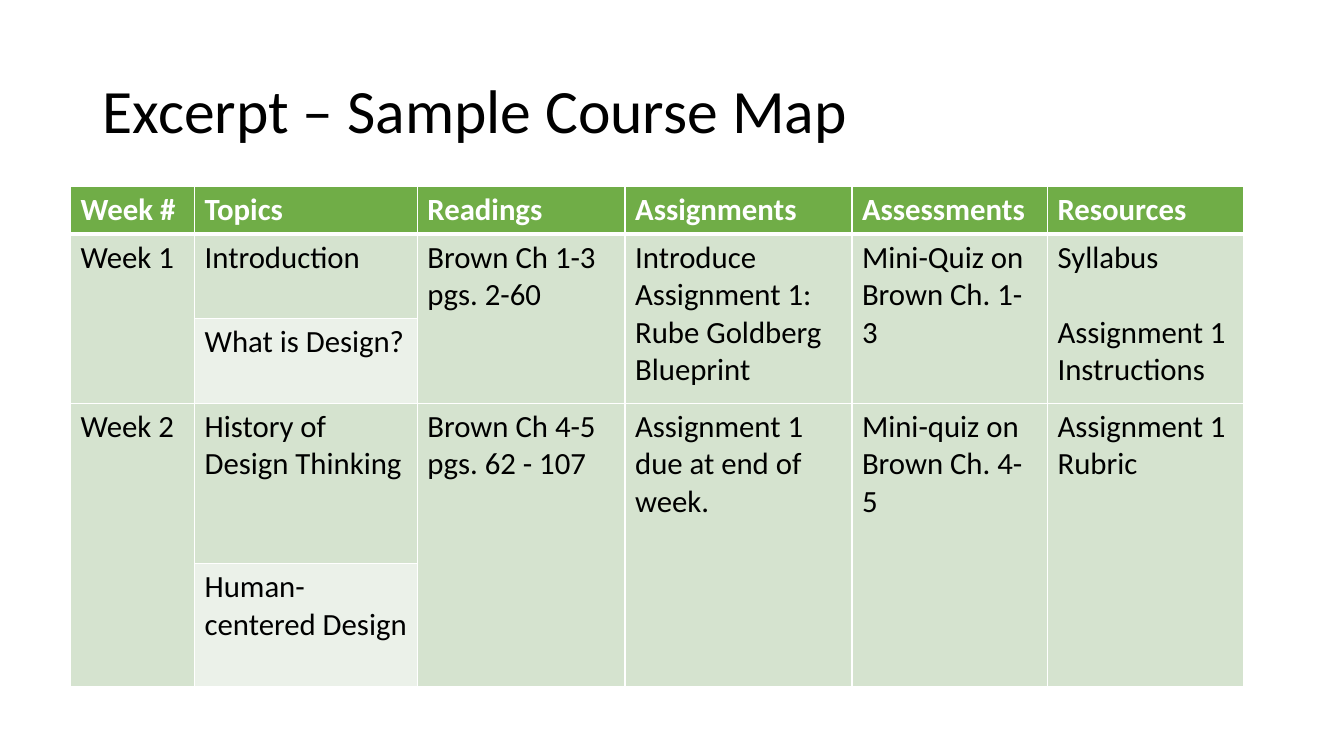
import dataclasses

import lxml.etree
import pptx
import pptx.dml.color
import pptx.enum.text
import pptx.oxml.ns
import pptx.table
import pptx.text.text
import pptx.util

COLS, ROWS = 133.3, 75
UNIT = pptx.util.Inches(0.1)
FONT = "Calibri"
HUES = {"green": "70AD47", "sage": "D5E3CF", "pale": "EBF1E9",
        "white": "FFFFFF", "black": "000000"}
WIDTHS = [12.3, 22.1, 20.6, 22.5, 19.4, 19.4]
HEIGHTS = [4.7, 8.4, 8.4, 15.9, 12.2]
HEADS = ["Week #", "Topics", "Readings", "Assignments", "Assessments", "Resources"]
TOPIC = HEADS.index("Topics")


@dataclasses.dataclass
class Week:
    name: str
    topics: list[str]
    reading: str
    task: str
    quiz: str
    extras: list[str]

    def merged(self) -> dict[int, list[str]]:
        return {0: [self.name], 2: [self.reading], 3: [self.task],
                4: [self.quiz], 5: self.extras}


WEEKS = [
    Week("Week 1", ["Introduction", "What is Design?"], "Brown Ch 1-3 pgs. 2-60",
         "Introduce Assignment 1: Rube Goldberg Blueprint",
         "Mini-Quiz on Brown Ch. 1-3", ["Syllabus", "Assignment 1 Instructions"]),
    Week("Week 2", ["History of Design Thinking", "Human-centered Design"],
         "Brown Ch 4-5 pgs. 62 - 107", "Assignment 1 due at end of week.",
         "Mini-quiz on Brown Ch. 4-5", ["Assignment 1 Rubric"]),
]


def grid(count: float) -> pptx.util.Emu:
    return pptx.util.Emu(round(count * UNIT))


def color(name: str) -> pptx.dml.color.RGBColor:
    return pptx.dml.color.RGBColor.from_string(HUES[name])


def write(para: pptx.text.text._Paragraph, text: str, size: float,
          hue: str = "black", bold: bool = False) -> None:
    run = para.add_run()
    run.text = text
    run.font.name = FONT
    run.font.size = pptx.util.Pt(size)
    run.font.bold = bold
    run.font.color.rgb = color(hue)


def style(cell: pptx.table._Cell, fill: str, top: float = 1, base: float = 1) -> None:
    props = cell._tc.get_or_add_tcPr()
    for side, width in {"L": 1, "R": 1, "T": top, "B": base}.items():
        line = lxml.etree.SubElement(props, pptx.oxml.ns.qn(f"a:ln{side}"),
                                     w=str(pptx.util.Pt(width)))
        solid = lxml.etree.SubElement(line, pptx.oxml.ns.qn("a:solidFill"))
        lxml.etree.SubElement(solid, pptx.oxml.ns.qn("a:srgbClr"), val=HUES["white"])
    cell.fill.solid()
    cell.fill.fore_color.rgb = color(fill)


def enter(cell: pptx.table._Cell, lines: list[str], hue: str = "black",
          bold: bool = False) -> None:
    for index, text in enumerate(lines):
        para = cell.text_frame.add_paragraph() if index else cell.text_frame.paragraphs[0]
        if index:
            para.space_before = pptx.util.Pt(26.8)
        write(para, text, 22, hue, bold)


def main() -> None:
    deck = pptx.Presentation()
    deck.slide_width, deck.slide_height = grid(COLS), grid(ROWS)
    slide = deck.slides.add_slide(deck.slide_layouts[6])

    title = slide.shapes.add_textbox(grid(9.2), grid(4), grid(115), grid(14.5))
    frame = title.text_frame
    frame.word_wrap = True
    frame.vertical_anchor = pptx.enum.text.MSO_ANCHOR.MIDDLE
    frame.paragraphs[0].line_spacing = 0.9
    write(frame.paragraphs[0], "Excerpt – Sample Course Map", 44)

    table = slide.shapes.add_table(len(HEIGHTS), len(WIDTHS), grid(7), grid(18.5),
                                   grid(sum(WIDTHS)), grid(sum(HEIGHTS))).table
    for column, width in zip(table.columns, WIDTHS):
        column.width = grid(width)
    for row, height in zip(table.rows, HEIGHTS):
        row.height = grid(height)

    for col, head in enumerate(HEADS):
        style(table.cell(0, col), "green", base=3)
        enter(table.cell(0, col), [head], "white", True)
        for row in range(1, len(HEIGHTS)):
            lower = col == TOPIC and row % 2 == 0
            style(table.cell(row, col), "pale" if lower else "sage",
                  top=3 if row == 1 else 1)

    for index, week in enumerate(WEEKS):
        first = 1 + 2 * index
        for step, topic in enumerate(week.topics):
            enter(table.cell(first + step, TOPIC), [topic])
        for col, lines in week.merged().items():
            cell = table.cell(first, col)
            cell.merge(table.cell(first + 1, col))
            enter(cell, lines)

    deck.save("out.pptx")


if __name__ == "__main__":
    main()
